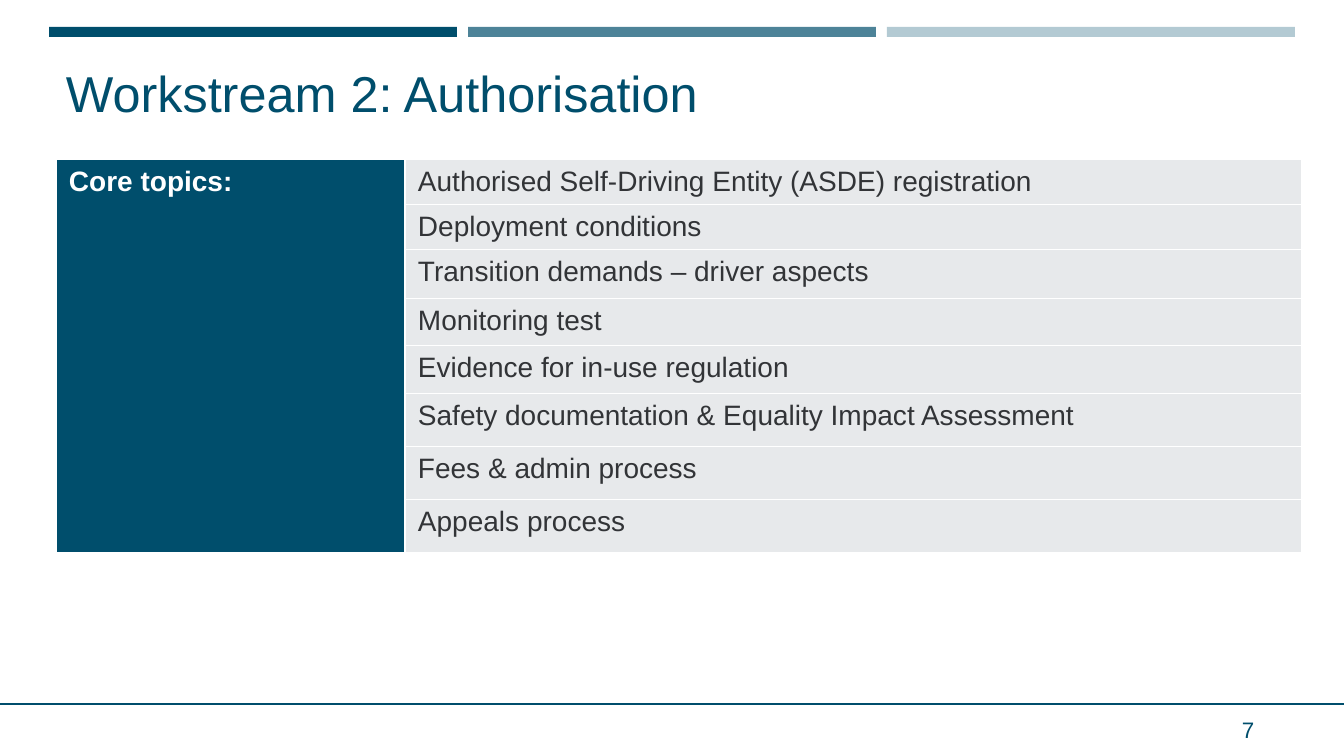
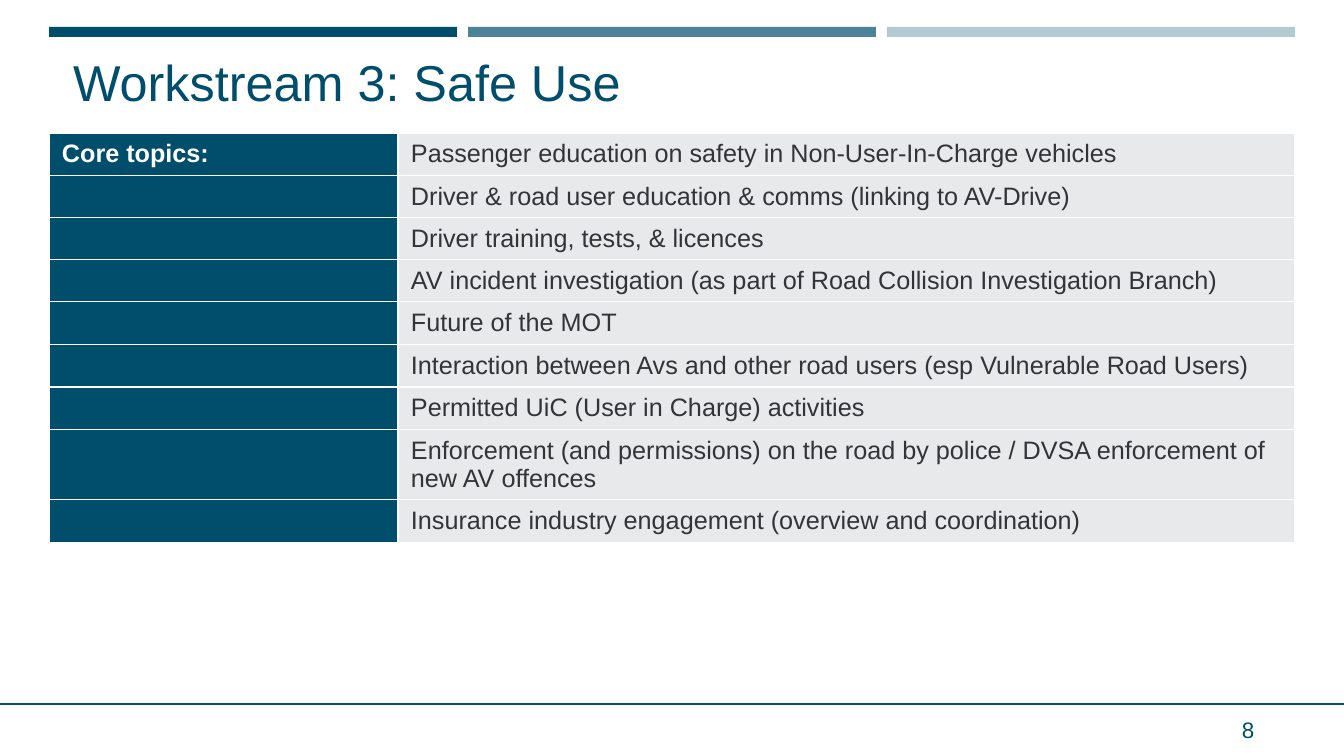
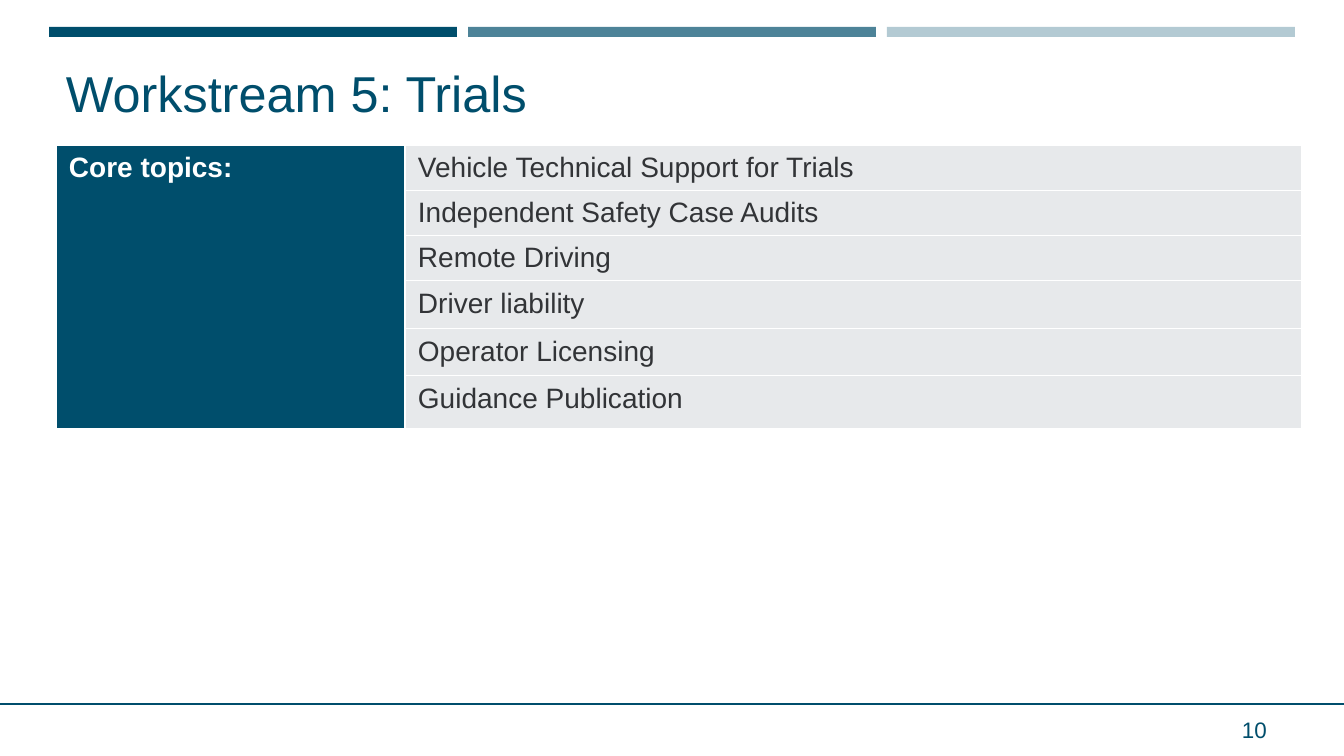
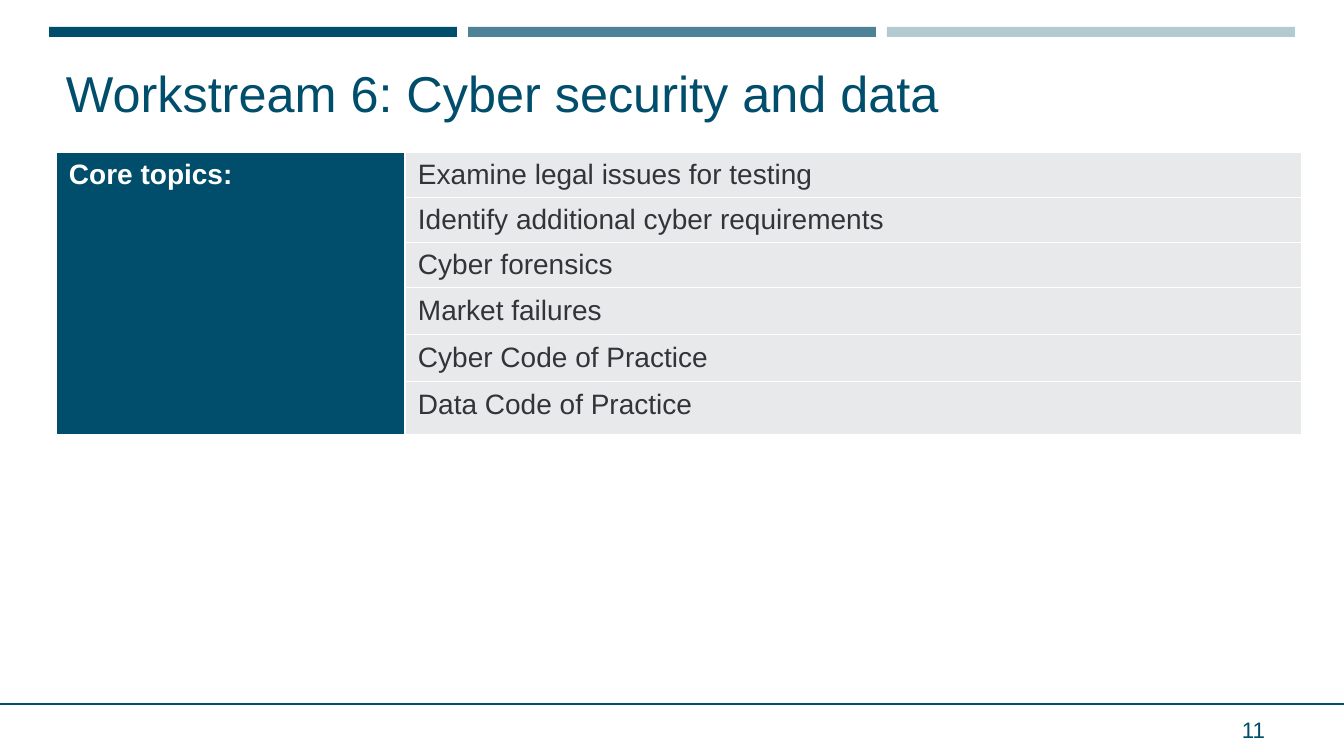
from dataclasses import dataclass

from lxml import etree
from pptx import Presentation
from pptx.dml.color import RGBColor
from pptx.enum.shapes import MSO_CONNECTOR, MSO_SHAPE
from pptx.enum.text import MSO_ANCHOR, MSO_AUTO_SIZE, PP_ALIGN
from pptx.oxml.ns import qn
from pptx.util import Pt

STRAIGHT = MSO_CONNECTOR.STRAIGHT
RECTANGLE = MSO_SHAPE.RECTANGLE
TOP, MIDDLE, BOTTOM = MSO_ANCHOR.TOP, MSO_ANCHOR.MIDDLE, MSO_ANCHOR.BOTTOM
LEFT = PP_ALIGN.LEFT
NO_AUTOFIT = MSO_AUTO_SIZE.NONE


@dataclass(frozen=True)
class Theme:
    font: str = "Arial"
    navy: str = "004E6C"
    teal: str = "4D8398"
    mist: str = "B3CAD3"
    ink: str = "323437"
    pale: str = "E7E9EB"
    white: str = "FFFFFF"
    title_size: int = 36
    number_size: int = 16


THEME = Theme()


def px(length):
    """Turn pixels into EMU, at 100.8 pixels to the inch."""
    return round(length * 914400 / 100.8)


def write(frame, text, *, size, color, bold=False, anchor=TOP, inset=(10, 5),
          line_spacing=None, space_after=None):
    """Put one formatted paragraph into a text frame or a table cell."""
    frame.vertical_anchor = anchor
    frame.margin_left = frame.margin_right = px(inset[0])
    frame.margin_top = frame.margin_bottom = px(inset[1])
    para = getattr(frame, "text_frame", frame).paragraphs[0]
    para.alignment = LEFT
    if line_spacing:
        para.line_spacing = line_spacing
    if space_after:
        para.space_after = Pt(space_after)
    if text:
        span = para.add_run()
        span.text = text
        span.font.name = THEME.font
        span.font.size = Pt(size)
        span.font.bold = bold
        span.font.color.rgb = RGBColor.from_string(color)
    else:
        # An empty cell still needs a font, which sets its least height
        end = etree.SubElement(para._p, qn("a:endParaRPr"), sz=str(size * 100))
        etree.SubElement(end, qn("a:latin"), typeface=THEME.font)


# Content of the workstream pages: each topic has its row height in px
WORKSTREAMS = [
    dict(number=7, title="Workstream 2: Authorisation", title_at=(56, 50),
         table_at=(56, 159), size=20, merged=True, topics=[
             ("Authorised Self-Driving Entity (ASDE) registration", 45),
             ("Deployment conditions", 45),
             ("Transition demands – driver aspects", 49),
             ("Monitoring test", 47),
             ("Evidence for in-use regulation", 48),
             ("Safety documentation & Equality Impact Assessment", 53),
             ("Fees & admin process", 53),
             ("Appeals process", 53)]),
    dict(number=8, title="Workstream 3: Safe Use", title_at=(63, 39),
         table_at=(49, 133), size=18, merged=False, topics=[
             ("Passenger education on safety in Non-User-In-Charge vehicles", 41),
             ("Driver & road user education & comms (linking to AV-Drive)", 42),
             ("Driver training, tests, & licences", 42),
             ("AV incident investigation (as part of Road Collision Investigation Branch)", 42),
             ("Future of the MOT", 43),
             ("Interaction between Avs and other road users (esp Vulnerable Road Users)", 42),
             ("Permitted UiC (User in Charge) activities", 41),
             ("Enforcement (and permissions) on the road by police / "
              "DVSA enforcement of new AV offences", 70),
             ("Insurance industry engagement (overview and coordination)", 43)]),
    dict(number=10, title="Workstream 5: Trials", title_at=(56, 50),
         table_at=(56, 145), size=20, merged=True, topics=[
             ("Vehicle Technical Support for Trials", 45),
             ("Independent Safety Case Audits", 45),
             ("Remote Driving", 45),
             ("Driver liability", 48),
             ("Operator Licensing", 47),
             ("Guidance Publication", 53)]),
    dict(number=11, title="Workstream 6: Cyber security and data", title_at=(56, 50),
         table_at=(56, 152), size=20, merged=True, topics=[
             ("Examine legal issues for testing", 45),
             ("Identify additional cyber requirements", 45),
             ("Cyber forensics", 45),
             ("Market failures", 47),
             ("Cyber Code of Practice", 47),
             ("Data Code of Practice", 53)]),
]
COLUMN_WIDTHS = (349, 897)

deck = Presentation()
deck.slide_width, deck.slide_height = px(1344), px(756)

# Title-only layout, kept to its title
layout = deck.slide_layouts[5]
for holder in list(layout.placeholders):
    if holder.placeholder_format.idx != 0:
        layout.shapes.element.remove(holder.element)
pages = [deck.slides.add_slide(layout) for _ in WORKSTREAMS]

# Footer line and top bands: drawn once, then moved to the layout
footer_line = pages[0].shapes.add_connector(STRAIGHT, 0, px(704), px(1344), px(704))
footer_line.line.color.rgb = RGBColor.from_string(THEME.navy)
footer_line.line.width = Pt(1.5)
etree.SubElement(footer_line.element.spPr, qn("a:effectLst"))
layout.shapes.element.append(footer_line.element)
for index, color in enumerate((THEME.navy, THEME.teal, THEME.mist)):
    band = pages[0].shapes.add_shape(
        RECTANGLE, px(49 + index * 419), px(27), px(408), px(10))
    band.shadow.inherit = False
    band.fill.solid()
    band.fill.fore_color.rgb = RGBColor.from_string(color)
    band.line.fill.background()
    # Ids follow on from those already in the layout
    band.element.nvSpPr.cNvPr.set("id", str(10 + index))
    layout.shapes.element.append(band.element)

for page, stream in zip(pages, WORKSTREAMS):
    # Title
    title = page.shapes.title
    title.left, title.top = map(px, stream["title_at"])
    title.width, title.height = px(1233), px(78)
    title.text_frame.word_wrap = True
    title.text_frame.auto_size = NO_AUTOFIT
    write(title.text_frame, stream["title"], size=THEME.title_size,
          color=THEME.navy, anchor=BOTTOM, line_spacing=0.9)

    # Topic table
    topics = stream["topics"]
    left, top = map(px, stream["table_at"])
    table = page.shapes.add_table(
        len(topics), 2, left, top, px(sum(COLUMN_WIDTHS)),
        px(sum(height for _, height in topics))).table
    table.first_row = table.horz_banding = False
    for column, width in zip(table.columns, COLUMN_WIDTHS):
        column.width = px(width)
    for row, (topic, height) in enumerate(topics):
        table.rows[row].height = px(height)
        heading = "" if row else "Core topics:"
        for column, (text, color, fill) in enumerate((
                (heading, THEME.white, THEME.navy), (topic, THEME.ink, THEME.pale))):
            cell = table.cell(row, column)
            write(cell, text, size=stream["size"], color=color,
                  bold=column == 0, inset=(13, 7))
            properties = cell._tc.get_or_add_tcPr()
            for side in ("lnL", "lnR", "lnT", "lnB"):
                border = etree.SubElement(properties, qn(f"a:{side}"), w=str(Pt(1)))
                paint = etree.SubElement(border, qn("a:solidFill"))
                etree.SubElement(paint, qn("a:srgbClr"), val=THEME.white)
            cell.fill.solid()
            cell.fill.fore_color.rgb = RGBColor.from_string(fill)
    if stream["merged"]:
        table.cell(0, 0).merge(table.cell(len(topics) - 1, 0))

    # Page number
    box = page.shapes.add_textbox(px(1232), px(710), px(56), px(40))
    box.text_frame.word_wrap = True
    write(box.text_frame, str(stream["number"]), size=THEME.number_size,
          color=THEME.navy, anchor=MIDDLE, space_after=6)

deck.save("out.pptx")
